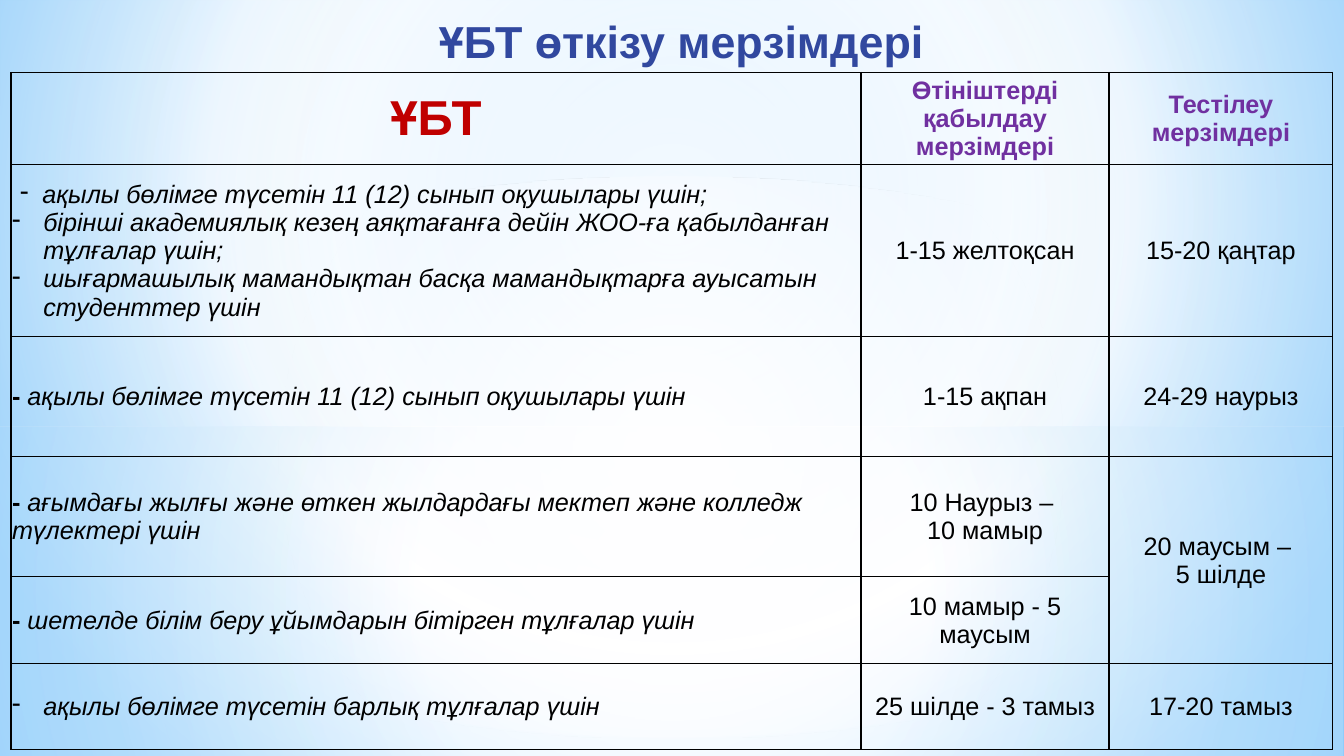
"""Build the slide with the testing schedule table."""
import pptx
import pptx.dml.color
import pptx.enum.shapes
import pptx.enum.text
import pptx.oxml
import pptx.oxml.ns
import pptx.util
from lxml import etree

Inches = pptx.util.Inches
Pt = pptx.util.Pt
qn = pptx.oxml.ns.qn
SHAPES = pptx.enum.shapes.MSO_SHAPE
ALIGN = pptx.enum.text.PP_ALIGN
MIDDLE = pptx.enum.text.MSO_ANCHOR.MIDDLE

CENTRE = (50, 50, 50, 50)
PANELS = [
    (SHAPES.RECTANGLE, 4.23, 3.27,
     [(0, "FFFFFF", 91), (37, "FFFFFF", 76), (100, "B4DCFA", 79)], CENTRE),
    (SHAPES.RECTANGLE, 0, 4.23,
     [(0, "FFFFFF", 89), (48, "FFFFFF", 62), (100, "B4DCFA", 79)], CENTRE),
    (SHAPES.RECTANGLE, 2.9, 2.5,
     [(0, "FFFFFF", 0), (29, "FFFFFF", 30), (45, "B4DCFA", 40),
      (55, "FFFFFF", 26), (65, "B4DCFA", 60), (100, "FFFFFF", 0)], None),
    (SHAPES.OVAL, 1.75, 5.58, [(0, "FFFFFF", 100), (54, "FFFFFF", 0)], CENTRE),
]
BACKGROUND = [(0, "9ED5FF", 100), (60, "FFFFFF", 100), (100, "5BB9FF", 100)]

COLUMNS = [8.43, 2.46, 2.22]
ROWS = [0.86, 1.71, 1.19, 1.19, 0.86, 0.86]
HEADERS = [("ҰБТ", 35, "C00000"),
           ("Өтініштерді қабылдау мерзімдері", 18, "7030A0"),
           ("Тестілеу мерзімдері", 18, "7030A0")]
HANGING = (0.31, -0.31)
GROUPS = [
    [("ақылы бөлімге түсетін 11 (12) сынып оқушылары үшін;", (0.3, -0.22)),
     ("бірінші академиялық кезең аяқтағанға дейін ЖОО-ға қабылданған тұлғалар үшін;", HANGING),
     ("шығармашылық мамандықтан басқа мамандықтарға ауысатын студенттер үшін", HANGING)],
    [("ақылы бөлімге түсетін 11 (12) сынып оқушылары үшін", None)],
    [("ағымдағы жылғы және өткен жылдардағы мектеп және колледж түлектері үшін", None)],
    [("шетелде білім беру ұйымдарын бітірген тұлғалар үшін", None)],
    [("ақылы бөлімге түсетін барлық тұлғалар үшін", HANGING)],
]
DATES = [
    ("1-15 желтоқсан", "15-20 қаңтар"),
    ("1-15 ақпан", "24-29 наурыз"),
    ("10 Наурыз – \n10 мамыр", "20 маусым – \n5 шілде"),
    ("10 мамыр - 5 маусым", None),
    ("25 шілде - 3 тамыз", "17-20 тамыз"),
]


def colour(value):
    """Turn a hex string into a colour."""
    return pptx.dml.color.RGBColor.from_string(value)


def set_gradient(fill, element, stops, focus):
    """Give a fill its stops, circular around focus or else running downwards."""
    fill.gradient()
    gradient = next(element.iter(qn("a:gradFill")))
    for child in list(gradient):
        gradient.remove(child)
    stop_list = etree.SubElement(gradient, qn("a:gsLst"))
    for position, value, opacity in stops:
        stop = etree.SubElement(stop_list, qn("a:gs"), pos=str(position * 1000))
        tint = etree.SubElement(stop, qn("a:srgbClr"), val=value)
        if opacity < 100:
            etree.SubElement(tint, qn("a:alpha"), val=str(opacity * 1000))
    if focus:
        circle = etree.SubElement(gradient, qn("a:path"), path="circle")
        sides = {side: str(share * 1000) for side, share in zip("ltrb", focus)}
        etree.SubElement(circle, qn("a:fillToRect"), **sides)
    else:
        etree.SubElement(gradient, qn("a:lin"), ang="5400000", scaled="0")


def add_panel(page, kind, top, height, stops, focus):
    """Add a full-width translucent panel."""
    panel = page.shapes.add_shape(kind, 0, Inches(top), Inches(13.33), Inches(height))
    panel.shadow.inherit = False
    panel.line.fill.background()
    set_gradient(panel.fill, panel.element.spPr, stops, focus)


def style_span(span, size=18, value="000000", bold=False, italic=False):
    """Set the font of a run."""
    font = span.font
    font.name = "Arial"
    font.size = Pt(size)
    font.bold = bold
    font.italic = italic
    font.color.rgb = colour(value)


def write_centred(frame, text, **style):
    """Fill a text frame with centred paragraphs."""
    frame.text = text
    for para in frame.paragraphs:
        para.alignment = ALIGN.CENTER
        for span in para.runs:
            style_span(span, **style)


def add_dash_bullet(para, left, first):
    """Give a paragraph a hanging dash bullet."""
    properties = para._p.get_or_add_pPr()
    properties.set("marL", str(Inches(left)))
    properties.set("indent", str(Inches(first)))
    etree.SubElement(properties, qn("a:buFontTx"))
    etree.SubElement(properties, qn("a:buChar"), char="-")


def write_groups(frame, groups):
    """List the groups of people, with bullets or bold dashes."""
    frame.text = "\n".join(text if indents else "" for text, indents in groups)
    for para, (text, indents) in zip(frame.paragraphs, groups):
        para.alignment = ALIGN.LEFT
        if indents:
            add_dash_bullet(para, *indents)
            style_span(para.runs[0], italic=True)
        else:
            for part, is_dash in (("- ", True), (text, False)):
                span = para.add_run()
                span.text = part
                style_span(span, bold=is_dash, italic=not is_dash)


def style_cell(cell):
    """Give a cell thin black borders, no fill and narrow margins."""
    cell.vertical_anchor = MIDDLE
    cell.margin_left = cell.margin_right = cell.margin_top = Inches(0.01)
    cell.margin_bottom = 0
    cell.fill.background()
    properties = cell._tc.get_or_add_tcPr()
    for index, side in enumerate(("lnL", "lnR", "lnT", "lnB")):
        border = etree.Element(qn("a:" + side), w=str(Pt(1)))
        solid = etree.SubElement(border, qn("a:solidFill"))
        etree.SubElement(solid, qn("a:srgbClr"), val="000000")
        properties.insert(index, border)


def add_schedule(page):
    """Add the table of application and testing dates."""
    frame = page.shapes.add_table(len(ROWS), len(COLUMNS), Inches(0.11), Inches(0.72),
                                  Inches(sum(COLUMNS)), Inches(sum(ROWS)))
    table = frame.table
    table.first_row = table.horz_banding = False
    for column, width in zip(table.columns, COLUMNS):
        column.width = Inches(width)
    for row, height in zip(table.rows, ROWS):
        row.height = Inches(height)
    for cell in table.iter_cells():
        style_cell(cell)
    table.cell(3, 2).merge(table.cell(4, 2))
    for index, (text, size, value) in enumerate(HEADERS):
        write_centred(table.cell(0, index).text_frame, text, size=size, value=value, bold=True)
    for index, (groups, dates) in enumerate(zip(GROUPS, DATES), 1):
        write_groups(table.cell(index, 0).text_frame, groups)
        for column, text in enumerate(dates, 1):
            if text:
                write_centred(table.cell(index, column).text_frame, text)


def add_title(page):
    """Add the slide title."""
    box = page.shapes.add_textbox(Inches(0.66), Inches(0.09), Inches(12.2), Inches(0.63))
    frame = box.text_frame
    frame.word_wrap = True
    write_centred(frame, "ҰБТ өткізу мерзімдері", size=32, value="31489F", bold=True)
    frame.paragraphs[0].space_before = Pt(5)
    frame.paragraphs[0].space_after = Pt(3)


def main():
    """Build and save the deck."""
    deck = pptx.Presentation()
    deck.slide_width = Inches(13.33)
    deck.slide_height = Inches(7.5)
    page = deck.slides.add_slide(deck.slide_layouts[6])
    set_gradient(page.background.fill, page.element, BACKGROUND, (20, 10, 20, 60))
    for panel in PANELS:
        add_panel(page, *panel)
    add_title(page)
    add_schedule(page)
    deck.save("out.pptx")


if __name__ == "__main__":
    main()
